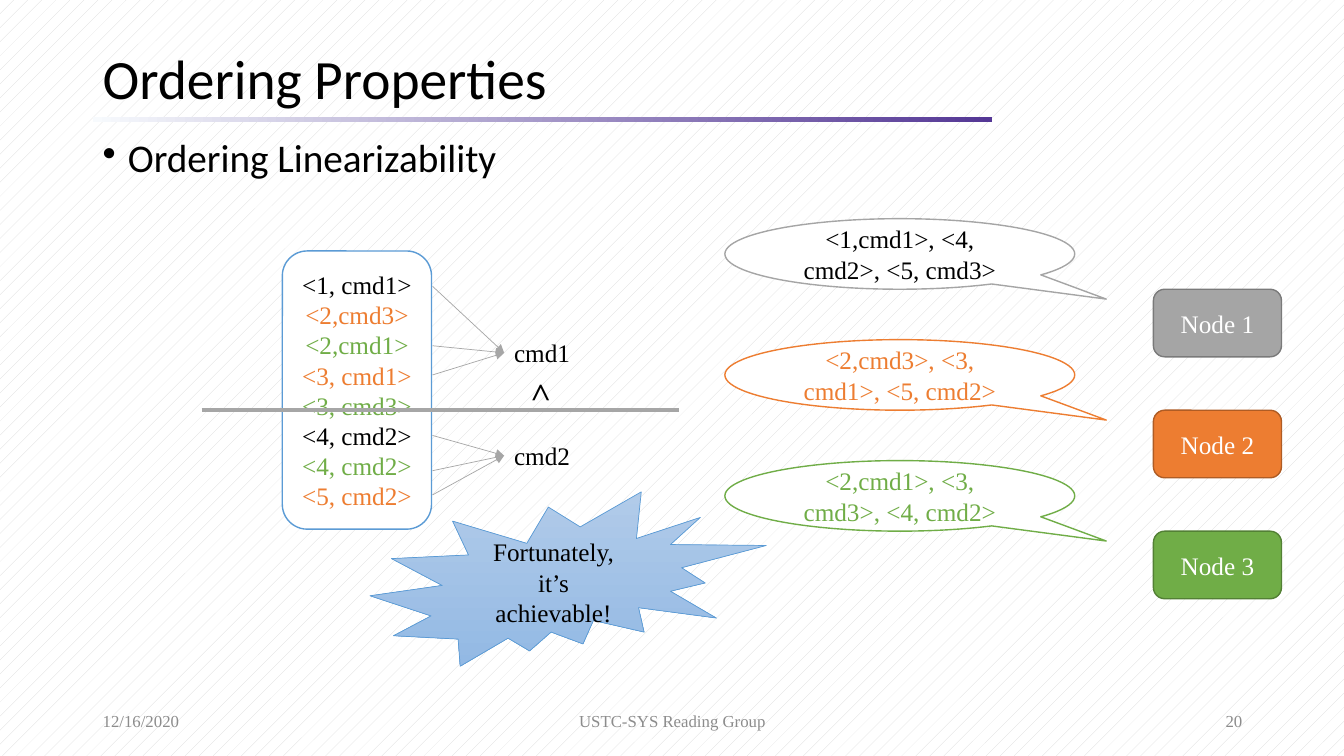
from dataclasses import dataclass

from pptx import Presentation
from pptx.dml.color import RGBColor
from pptx.enum.dml import MSO_PATTERN
from pptx.enum.shapes import MSO_CONNECTOR, MSO_SHAPE
from pptx.enum.text import MSO_ANCHOR, MSO_AUTO_SIZE, PP_ALIGN
from pptx.oxml.ns import qn
from pptx.util import Inches, Pt
from lxml import etree

LEFT, CENTER, RIGHT = PP_ALIGN.LEFT, PP_ALIGN.CENTER, PP_ALIGN.RIGHT
TOP, MIDDLE = MSO_ANCHOR.TOP, MSO_ANCHOR.MIDDLE
ROUND_RECT, RECT = MSO_SHAPE.ROUNDED_RECTANGLE, MSO_SHAPE.RECTANGLE
CALLOUT, BURST = MSO_SHAPE.OVAL_CALLOUT, MSO_SHAPE.EXPLOSION2
STRAIGHT = MSO_CONNECTOR.STRAIGHT
GROW = MSO_AUTO_SIZE.SHAPE_TO_FIT_TEXT
DOTS = MSO_PATTERN.PERCENT_5
LEFT_SIDE = 1


@dataclass(frozen=True)
class Theme:
    heading: str = "Calibri"
    body: str = "Times New Roman"
    black: str = "000000"
    white: str = "FFFFFF"
    gray: str = "A5A5A5"
    gray_edge: str = "7A7A7A"
    orange: str = "ED7D31"
    orange_edge: str = "AF5C24"
    green: str = "70AD47"
    green_edge: str = "538035"
    blue: str = "5B9BD5"
    line: str = "A6A6A6"
    footer: str = "8C8C8C"
    dots: str = "D9D9D9"
    bar: tuple = ("F7FAFD", "543795")
    burst: tuple = ("B1CBE9", "93B9E4")
    title_size: float = 39.6
    bullet_size: float = 28
    sign_size: float = 24
    text_size: float = 18
    footer_size: float = 12


def rgb(color):
    return RGBColor.from_string(color)


def apply(target, values):
    for name, value in values.items():
        setattr(target, name, value)


class Deck:
    def __init__(self, theme):
        self.theme = theme
        self.prs = Presentation()
        apply(self.prs, {"slide_width": Inches(13.33), "slide_height": Inches(7.5)})
        self.slide = self.prs.slides.add_slide(self.prs.slide_layouts[6])

    def background(self):
        fill = self.slide.background.fill
        fill.patterned()
        fill.pattern = DOTS
        fill.fore_color.rgb = rgb(self.theme.dots)
        fill.back_color.rgb = rgb(self.theme.white)

    def fill_text(self, sp, lines, align=CENTER, anchor=MIDDLE, size=None, face=None,
                  bold=None, bullet=False, para=None, frame=None):
        tf = sp.text_frame
        apply(tf, {"word_wrap": True, "vertical_anchor": anchor, **(frame or {})})
        for i, (text, color) in enumerate(lines):
            p = tf.add_paragraph() if i else tf.paragraphs[0]
            if bullet:
                pPr = p._p.get_or_add_pPr()
                pPr.set("marL", str(Inches(0.25)))
                pPr.set("indent", str(-Inches(0.25)))
                etree.SubElement(pPr, qn("a:buChar")).set("char", "•")
            apply(p, {"alignment": align, **(para or {})})
            r = p.add_run()
            r.text = text
            apply(r.font, {"name": face or self.theme.body, "bold": bold,
                           "size": Pt(size or self.theme.text_size)})
            r.font.color.rgb = rgb(color)

    def text(self, box, text, color=None, rotation=0, **style):
        sp = self.slide.shapes.add_textbox(*map(Inches, box))
        sp.rotation = rotation
        self.fill_text(sp, [(text, color or self.theme.black)], **style)
        return sp

    def shape(self, kind, box, fill, edge=None, lines=(), width=1, angle=0, adjust=()):
        sp = self.slide.shapes.add_shape(kind, *map(Inches, box))
        sp.shadow.inherit = False
        for i, value in enumerate(adjust):
            sp.adjustments[i] = value
        if isinstance(fill, tuple):
            sp.fill.gradient()
            sp.fill.gradient_angle = angle
            for stop, color, position in zip(sp.fill.gradient_stops, fill, (0, 1)):
                stop.color.rgb = rgb(color)
                stop.position = position
        else:
            sp.fill.solid()
            sp.fill.fore_color.rgb = rgb(fill)
        if edge:
            sp.line.color.rgb = rgb(edge)
            sp.line.width = Pt(width)
        else:
            sp.line.fill.background()
        self.fill_text(sp, lines)
        return sp

    def line(self, start, end, width, target=None):
        cxn = self.slide.shapes.add_connector(STRAIGHT, *map(Inches, (*start, *end)))
        cxn.line.color.rgb = rgb(self.theme.line)
        cxn.line.width = Pt(width)
        spPr = cxn.element.spPr
        if target is not None:
            cxn.end_connect(target, LEFT_SIDE)
            etree.SubElement(spPr.find(qn("a:ln")), qn("a:tailEnd")).set("type", "triangle")
        etree.SubElement(spPr, qn("a:effectLst"))


def main():
    t = Theme()
    deck = Deck(t)
    deck.background()
    deck.shape(RECT, (0.92, 1.16, 8.92, 0.05), t.bar)
    deck.text((0.92, 0.43, 11.5, 0.75), "Ordering Properties", align=LEFT,
              size=t.title_size, face=t.heading, para={"line_spacing": 0.9})
    deck.text((0.92, 1.33, 11.5, 0.72), "Ordering Linearizability", align=LEFT,
              anchor=TOP, size=t.bullet_size, face=t.heading, bullet=True,
              para={"line_spacing": 0.9})

    footers = [(0.92, 3, "12/16/2020", LEFT),
               (4.42, 4.5, "USTC-SYS Reading Group", CENTER),
               (9.42, 3, "20", RIGHT)]
    for left, width, text, align in footers:
        deck.text((left, 6.95, width, 0.4), text, t.footer, align=align, size=t.footer_size)

    nodes = [("Node 1", t.gray, t.gray_edge, t.black, "<1,cmd1>, <4, cmd2>, <5, cmd3>"),
             ("Node 2", t.orange, t.orange_edge, t.orange, "<2,cmd3>, <3, cmd1>, <5, cmd2>"),
             ("Node 3", t.green, t.green_edge, t.green, "<2,cmd1>, <3, cmd3>, <4, cmd2>")]
    for i, (name, fill, edge, ink, commands) in enumerate(nodes):
        top = 2.17 + 1.2 * i
        deck.shape(ROUND_RECT, (11.44, top + 0.7, 1.27, 0.67), fill, edge, [(name, t.white)])
        deck.shape(CALLOUT, (7.19, top, 3.47, 0.7), t.white, fill, [(commands, ink)],
                   adjust=(0.59, 0.64))

    log = [("<1, cmd1>", t.black), ("<2,cmd3>", t.orange), ("<2,cmd1>", t.green),
           ("<3, cmd1>", t.orange), ("<3, cmd3>", t.green), ("<4, cmd2>", t.black),
           ("<4, cmd2>", t.green), ("<5, cmd2>", t.orange)]
    deck.shape(ROUND_RECT, (2.8, 2.49, 1.48, 2.76), t.white, t.blue, log)

    commands = [("cmd1", 3.3, (2.84, 3.43, 3.72)), ("cmd2", 4.32, (4.32, 4.67, 4.91))]
    for name, top, sources in commands:
        label = deck.text((5, top, 0.77, 0.4), name, align=LEFT, anchor=TOP,
                          frame={"auto_size": GROW})
        for y in sources:
            deck.line((4.29, y), (5, top + 0.2), 0.5, label)

    deck.text((5.19, 3.65, 0.39, 0.5), "<", rotation=90, align=LEFT, anchor=TOP,
              size=t.sign_size, bold=True, frame={"word_wrap": False, "auto_size": GROW})
    deck.line((2, 4.07), (6.73, 4.07), 3)
    deck.shape(BURST, (3.67, 4.88, 3.93, 1.73), t.burst, t.blue,
               [("Fortunately,", t.black), ("it’s achievable!", t.black)],
               width=0.5, angle=270)
    deck.prs.save("out.pptx")


if __name__ == "__main__":
    main()
